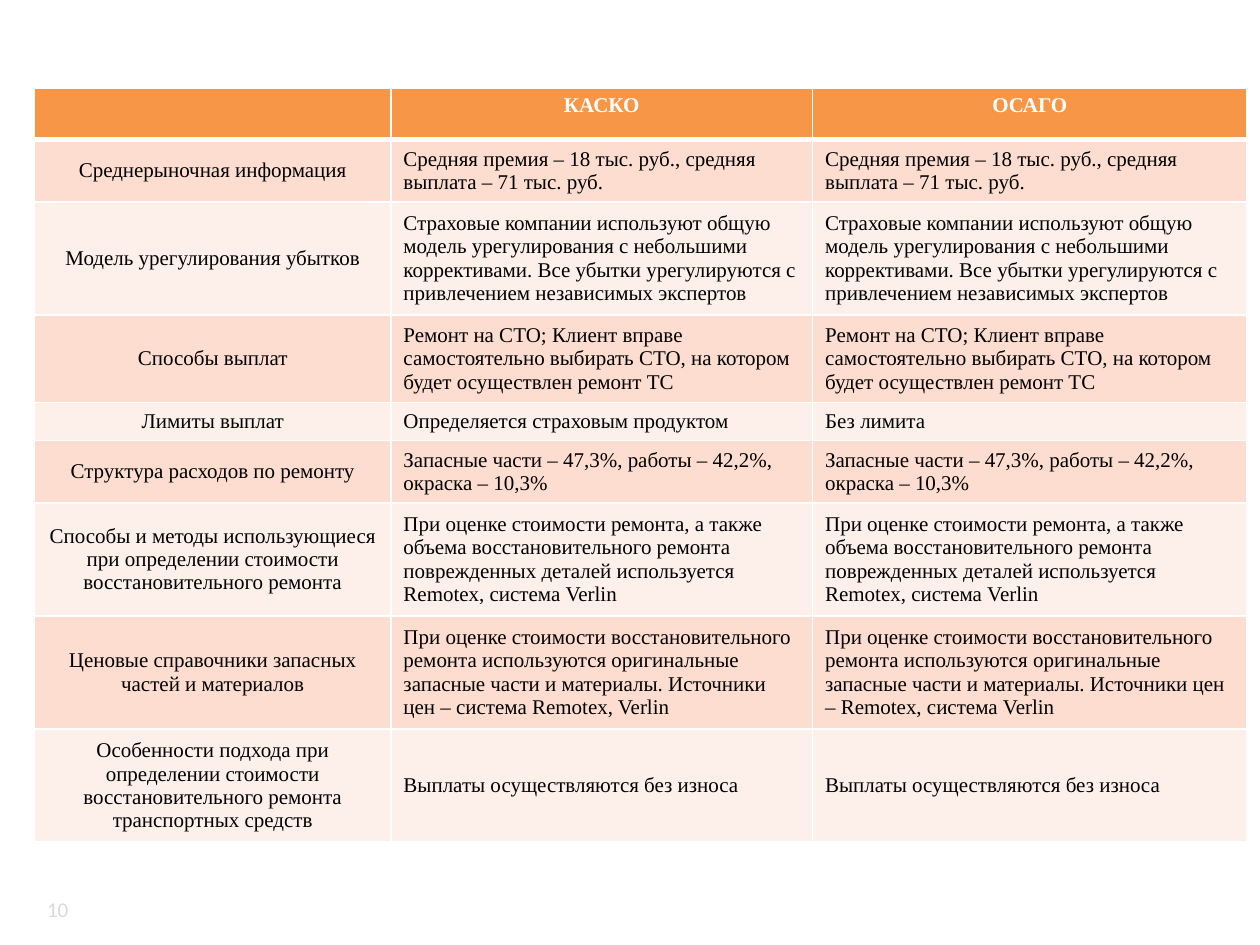
from lxml import etree
from pptx import Presentation
from pptx import util as u
from pptx.dml.color import RGBColor
from pptx.enum import text
from pptx.oxml import ns

WHITE = RGBColor(0xFF, 0xFF, 0xFF)
BLACK = RGBColor(0x00, 0x00, 0x00)
ORANGE = RGBColor(0xF7, 0x96, 0x46)
PEACH = RGBColor(0xFC, 0xDD, 0xCF)
CREAM = RGBColor(0xFD, 0xEF, 0xE9)
GREY = RGBColor(0xD9, 0xD9, 0xD9)

LEFT = u.Cm(0.7)
HEADER_FORMAT = {"name": "Times New Roman", "size": u.Pt(12), "bold": True}
BODY_FORMAT = {**HEADER_FORMAT, "bold": False}
NUMBER_FORMAT = {"name": "Calibri", "size": u.Pt(12), "bold": False}

COLUMN_WIDTHS = [7.18, 8.5, 8.76]
ROWS = [
    (1.04, "", "КАСКО", "ОСАГО"),
    (1.26, "Среднерыночная информация",
     "Средняя премия – 18 тыс. руб., средняя выплата – 71 тыс. руб."),
    (2.28, "Модель урегулирования убытков",
     "Страховые компании используют общую модель урегулирования с небольшими "
     "коррективами. Все убытки урегулируются с привлечением независимых экспертов"),
    (1.77, "Способы выплат",
     "Ремонт на СТО; Клиент вправе самостоятельно выбирать СТО, на котором "
     "будет осуществлен ремонт ТС"),
    (0.76, "Лимиты выплат", "Определяется страховым продуктом", "Без лимита"),
    (1.26, "Структура расходов по ремонту",
     "Запасные части – 47,3%, работы – 42,2%, окраска – 10,3%"),
    (2.28, "Способы и методы использующиеся при определении стоимости "
     "восстановительного ремонта",
     "При оценке стоимости ремонта, а также объема восстановительного ремонта "
     "поврежденных деталей используется Remotex, система Verlin"),
    (2.28, "Ценовые справочники запасных частей и материалов",
     "При оценке стоимости восстановительного ремонта используются оригинальные "
     "запасные части и материалы. Источники цен – система Remotex, Verlin",
     "При оценке стоимости восстановительного ремонта используются оригинальные "
     "запасные части и материалы. Источники цен – Remotex, система Verlin"),
    (2.28, "Особенности подхода при определении стоимости восстановительного "
     "ремонта транспортных средств",
     "Выплаты осуществляются без износа"),
]


def write(frame, words, align, color, values):
    para = frame.paragraphs[0]
    para.alignment = align
    span = para.add_run()
    span.text = words
    span.font.color.rgb = color
    for name, value in values.items():
        setattr(span.font, name, value)


def add_border(cell, side, width):
    line = etree.SubElement(cell._tc.get_or_add_tcPr(), ns.qn(f"a:ln{side}"), w=str(u.Pt(width)))
    fill = etree.SubElement(line, ns.qn("a:solidFill"))
    etree.SubElement(fill, ns.qn("a:srgbClr"), val=str(WHITE))


deck = Presentation()
deck.slide_width, deck.slide_height = u.Cm(25.4), u.Cm(19.05)
page = deck.slides.add_slide(deck.slide_layouts[6])

table = page.shapes.add_table(
    len(ROWS), len(COLUMN_WIDTHS), LEFT, u.Cm(1.77),
    u.Cm(sum(COLUMN_WIDTHS)), u.Cm(sum(row[0] for row in ROWS))).table
for column, width in zip(table.columns, COLUMN_WIDTHS):
    column.width = u.Cm(width)

for row_index, (height, label, *details) in enumerate(ROWS):
    table.rows[row_index].height = u.Cm(height)
    is_header = row_index == 0
    for column_index, words in enumerate([label, details[0], details[-1]]):
        cell = table.cell(row_index, column_index)
        for side in "LRTB":
            under_header = (row_index, side) in [(0, "B"), (1, "T")]
            add_border(cell, side, 3 if under_header else 1)
        cell.fill.solid()
        cell.fill.fore_color.rgb = ORANGE if is_header else PEACH if row_index % 2 else CREAM
        cell.vertical_anchor = text.MSO_ANCHOR.TOP if is_header else text.MSO_ANCHOR.MIDDLE
        centred = is_header or column_index == 0
        if words:
            write(cell.text_frame, words,
                  text.PP_ALIGN.CENTER if centred else text.PP_ALIGN.LEFT,
                  WHITE if is_header else BLACK,
                  HEADER_FORMAT if is_header else BODY_FORMAT)

box = page.shapes.add_textbox(LEFT, u.Cm(17.81), u.Cm(1.57), u.Cm(1.02))
box.text_frame.word_wrap = True
box.text_frame.vertical_anchor = text.MSO_ANCHOR.MIDDLE
write(box.text_frame, "10", text.PP_ALIGN.LEFT, GREY, NUMBER_FORMAT)

deck.save("out.pptx")
